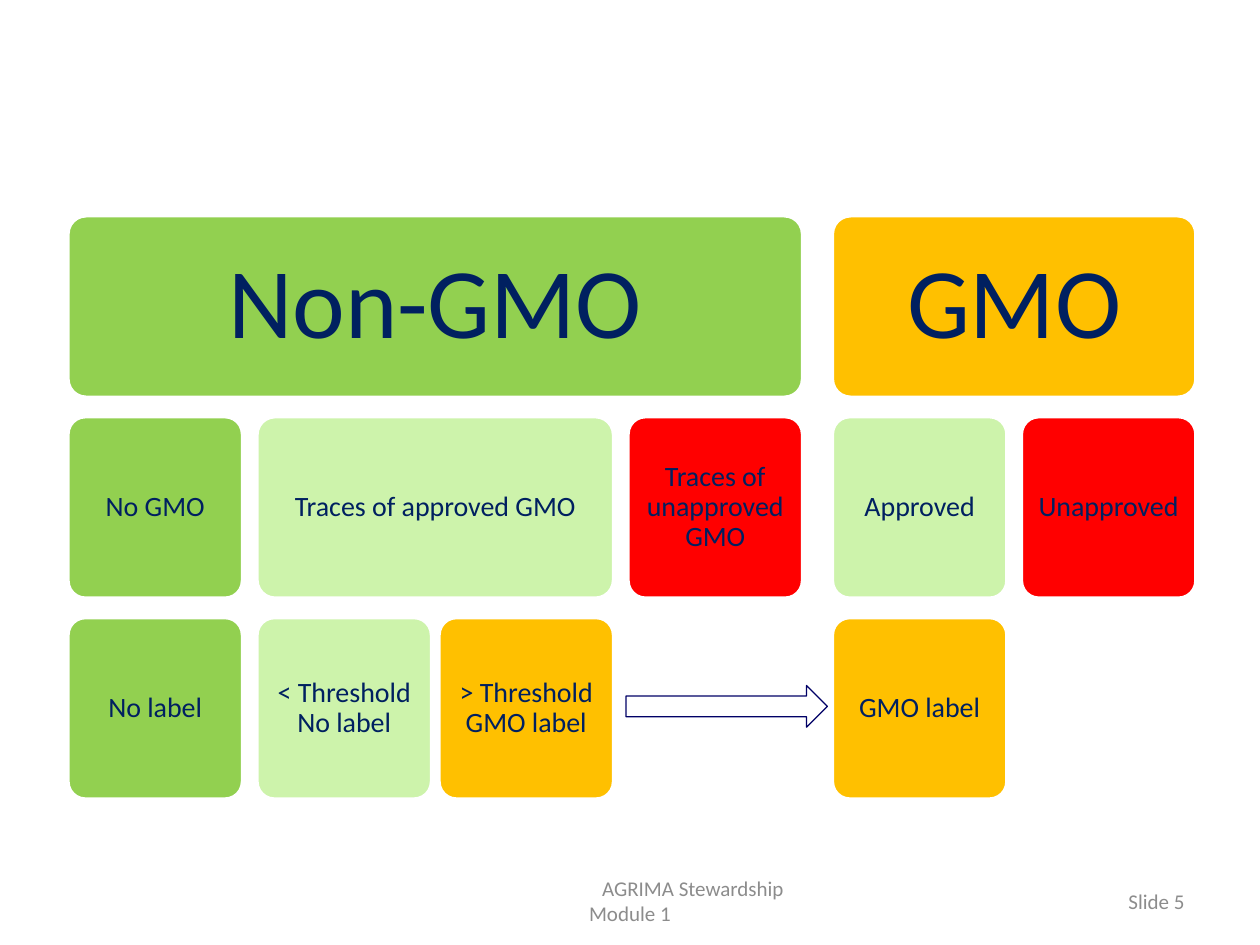
from dataclasses import dataclass

from lxml.etree import SubElement as Sub
from pptx import Presentation
from pptx.dml.color import RGBColor
from pptx.enum.shapes import MSO_SHAPE as Kind
from pptx.enum.text import MSO_ANCHOR as Anchor, PP_ALIGN as Align
from pptx.oxml.ns import qn
from pptx.util import Cm, Pt


@dataclass(frozen=True)
class Theme:
    """Colours, font and type sizes of the slide."""
    font: str = "Calibri"
    ink: str = "002060"
    grey: str = "8C8C8C"
    edge: str = "FFFFFF"
    navy: str = "000066"
    green: str = "92D050"
    pale: str = "CDF3AB"
    amber: str = "FFC000"
    red: str = "FF0000"
    head: int = 57
    body: int = 16
    foot: int = 12


LOOK = Theme()
LEAF = 3.52
GAPS = (0.6, 0.29, 0.15)
HIGH, PITCH = 3.66, 4.05

TREE = [
    ("Non-GMO", LOOK.green, [
        ("No GMO", LOOK.green, [("No label", LOOK.green, [])]),
        ("Traces of approved GMO", LOOK.pale, [
            ("< Threshold No label", LOOK.pale, []),
            ("> Threshold GMO label", LOOK.amber, []),
        ]),
        ("Traces of unapproved GMO", LOOK.red, []),
    ]),
    ("GMO", LOOK.amber, [
        ("Approved", LOOK.pale, [("GMO label", LOOK.amber, [])]),
        ("Unapproved", LOOK.red, []),
    ]),
]


def write(shape, text, size=LOOK.body, color=LOOK.ink, align=Align.CENTER,
          inset=(0.25, 0.13), space=1.0, tab=None):
    """Put formatted text into a shape."""
    frame = shape.text_frame
    frame.word_wrap = True
    frame.vertical_anchor = Anchor.MIDDLE
    frame.margin_left = frame.margin_right = Cm(inset[0])
    frame.margin_top = frame.margin_bottom = Cm(inset[1])
    para = frame.paragraphs[0]
    para.alignment = align
    para.line_spacing = space
    if tab:
        stops = Sub(para._p.get_or_add_pPr(), qn("a:tabLst"))
        Sub(stops, qn("a:tab"), pos=str(Cm(tab)), algn="l")
    run = para.add_run()
    run.text = text
    run.font.name = LOOK.font
    run.font.size = Pt(size)
    run.font.color.rgb = RGBColor.from_string(color)


def draw(slide, kind, box, line, width, fill=None):
    """Add a preset shape with its line and optional fill."""
    shape = slide.shapes.add_shape(kind, *map(Cm, box))
    shape.shadow.inherit = False
    if fill:
        shape.fill.solid()
        shape.fill.fore_color.rgb = RGBColor.from_string(fill)
    else:
        shape.fill.background()
    shape.line.color.rgb = RGBColor.from_string(line)
    shape.line.width = Pt(width)
    return shape


def span(kids, level):
    """Return the width that a node needs for its children."""
    if not kids:
        return LEAF
    wide = sum(span(kid[2], level + 1) for kid in kids)
    return wide + GAPS[level] * (len(kids) - 1)


def grow(slide, nodes, left, top, level=0):
    """Draw a row of nodes with their children below them."""
    for text, fill, kids in nodes:
        wide = span(kids, level + 1)
        card = draw(slide, Kind.ROUNDED_RECTANGLE, (left, top, wide, HIGH),
                    LOOK.edge, 2, fill)
        card.adjustments[0] = 0.1
        size, pad = (LOOK.body, 0.15) if level else (LOOK.head, 0.6)
        write(card, text, size=size, inset=(pad, pad), space=0.9)
        grow(slide, kids, left, top + PITCH, level + 1)
        left += wide + GAPS[level]


def footer(slide, left, top, wide, high):
    """Place the module name and the slide number in one band."""
    parts = [
        ("\tAGRIMA Stewardship Module 1", 0, 8.04, Align.CENTER, 2.54),
        ("Slide 5", wide - 5.93, 5.93, Align.RIGHT, None),
    ]
    for text, shift, width, align, tab in parts:
        box = slide.shapes.add_textbox(
            *map(Cm, (left + shift, top, width, high)))
        write(box, text, size=LOOK.foot, color=LOOK.grey, align=align, tab=tab)


def main():
    """Build and save the slide."""
    deck = Presentation()
    deck.slide_width, deck.slide_height = Cm(25.4), Cm(19.05)
    slide = deck.slides.add_slide(deck.slide_layouts[6])
    footer(slide, 8.68, 17.65, 15.45, 1.02)
    grow(slide, TREE, 1.37, 4.35)
    draw(slide, Kind.RIGHT_ARROW, (12.62, 13.82, 4.06, 0.84), LOOK.navy, 0.75)
    deck.save("out.pptx")


if __name__ == "__main__":
    main()
